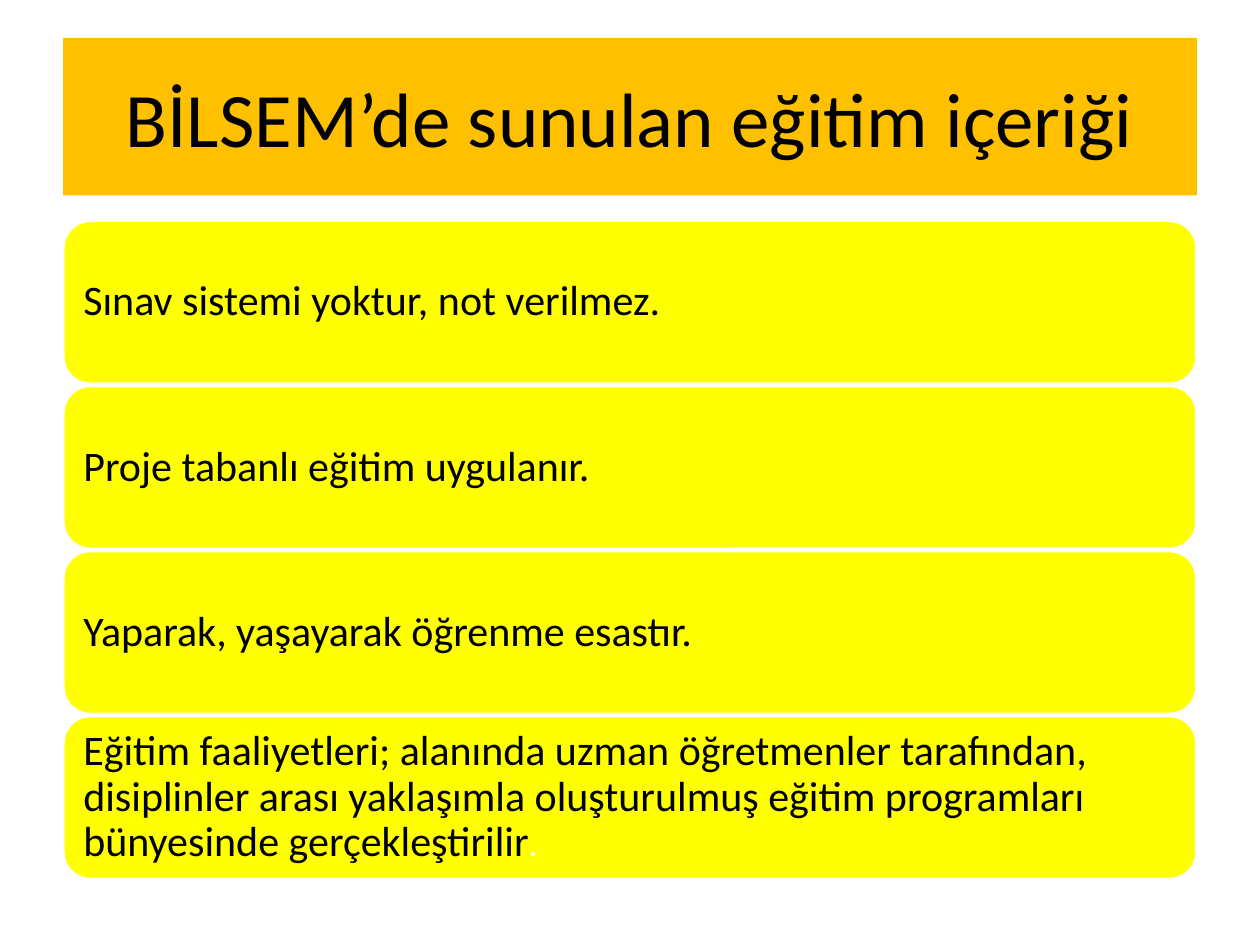
from pptx import Presentation
from pptx.dml.color import RGBColor
from pptx.enum.shapes import MSO_SHAPE
from pptx.enum.text import MSO_ANCHOR, PP_ALIGN
from pptx.util import Inches, Pt

# Content: each statement with its closing mark set apart, if any
TITLE = "BİLSEM’de sunulan eğitim içeriği"
STATEMENTS = [
    ("Sınav sistemi yoktur, not verilmez.",),
    ("Proje tabanlı eğitim uygulanır.",),
    ("Yaparak, yaşayarak öğrenme esastır.",),
    ("Eğitim faaliyetleri; alanında uzman öğretmenler tarafından, "
     "disiplinler arası yaklaşımla oluşturulmuş eğitim programları "
     "bünyesinde gerçekleştirilir", "."),
]
COLORS = {"banner": "FFC000", "card": "FFFF00", "text": "000000", "white": "FFFFFF"}
RUN_STYLES = [(24, "text"), (20, "white")]

# Layout
LEFT, WIDTH = 0.5, 9
CARD_TOP, CARD_HEIGHT, CARD_PITCH = 1.75, 1.3, 1.31


def rgb(name):
    return RGBColor.from_string(COLORS[name])


def paint(shape, color):
    shape.fill.solid()
    shape.fill.fore_color.rgb = rgb(color)


def style_run(run, size, color):
    run.font.name = "Calibri"
    run.font.size = Pt(size)
    run.font.color.rgb = rgb(color)


def add_card(slide, top, parts):
    card = slide.shapes.add_shape(
        MSO_SHAPE.ROUNDED_RECTANGLE,
        Inches(LEFT), Inches(top), Inches(WIDTH), Inches(CARD_HEIGHT))
    card.shadow.inherit = False
    paint(card, "card")
    card.line.color.rgb = rgb("white")
    card.line.width = Pt(2)

    frame = card.text_frame
    frame.word_wrap = True
    frame.vertical_anchor = MSO_ANCHOR.MIDDLE
    frame.margin_left = frame.margin_right = Inches(0.1)
    frame.margin_top = frame.margin_bottom = Inches(0.1)
    statement = frame.paragraphs[0]
    statement.alignment = PP_ALIGN.LEFT
    statement.line_spacing = 0.9
    for part, (size, color) in zip(parts, RUN_STYLES):
        run = statement.add_run()
        run.text = part
        style_run(run, size, color)


def main():
    prs = Presentation()
    prs.slide_width, prs.slide_height = Inches(10), Inches(7.5)
    slide = prs.slides.add_slide(prs.slide_layouts[5])

    # Title banner
    banner = slide.shapes.title
    banner.left, banner.top = Inches(LEFT), Inches(0.3)
    banner.width, banner.height = Inches(WIDTH), Inches(1.25)
    paint(banner, "banner")
    banner.text_frame.text = TITLE
    banner.text_frame.vertical_anchor = MSO_ANCHOR.MIDDLE
    heading = banner.text_frame.paragraphs[0]
    heading.alignment = PP_ALIGN.CENTER
    style_run(heading.runs[0], 44, "text")

    # Statement cards
    for row, parts in enumerate(STATEMENTS):
        add_card(slide, CARD_TOP + row * CARD_PITCH, parts)

    prs.save("out.pptx")


if __name__ == "__main__":
    main()
